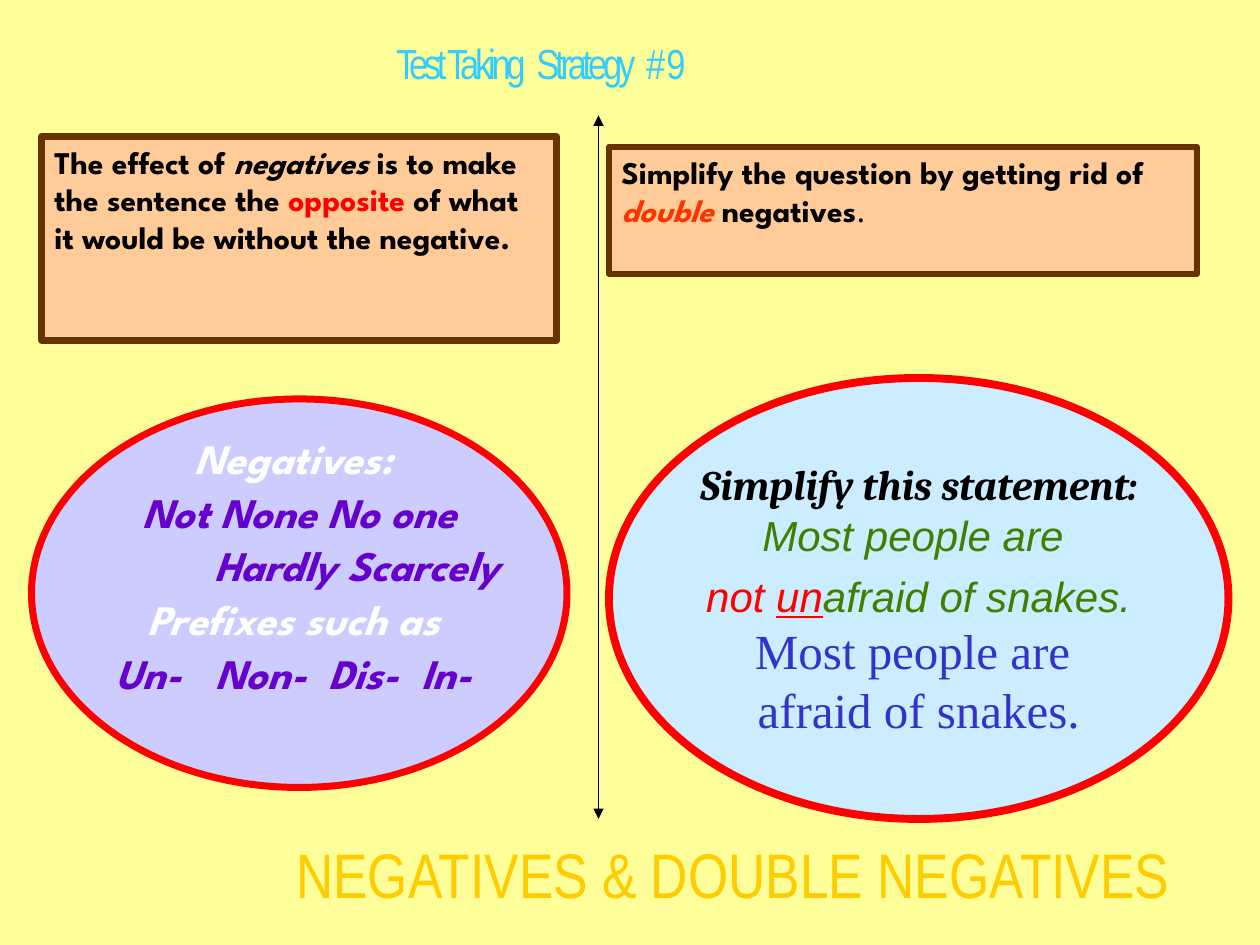
import pptx
import pptx.dml.color
import pptx.enum.shapes
import pptx.enum.text
import pptx.oxml.ns
import pptx.util
from lxml import etree

Pt = pptx.util.Pt
SHAPES = pptx.enum.shapes.MSO_SHAPE
ANCHOR = pptx.enum.text.MSO_ANCHOR
ALIGN = pptx.enum.text.PP_ALIGN

COLORS = {
    "background": "FFFF99", "title": "33CCFF", "topic": "FFCC00",
    "rule_fill": "FFCC99", "rule_line": "663300", "red": "FF0000",
    "orange": "FF3300", "lavender": "CCCCFF", "sky": "CCECFF",
    "purple": "6600CC", "green": "408000", "blue": "3333CC",
    "white": "FFFFFF", "black": "000000",
}


def color(name):
    return pptx.dml.color.RGBColor.from_string(COLORS[name])


def add_run(paragraph, text, font, size, tone="black", bold=False,
            italic=False, underline=False, spacing=0):
    run = paragraph.add_run()
    run.text = text
    run.font.name = font
    run.font.size = Pt(size)
    run.font.color.rgb = color(tone)
    run.font.bold = bold
    run.font.italic = italic
    run.font.underline = underline
    if spacing:
        run.font._element.set("spc", str(round(spacing * 100)))


def add_paragraph(frame, first=False, align=ALIGN.CENTER, before=0):
    paragraph = frame.paragraphs[0] if first else frame.add_paragraph()
    paragraph.alignment = align
    paragraph.space_before = Pt(before)
    return paragraph


def add_heading(slide, box, words, size, tone, spacing=0):
    shape = slide.shapes.add_textbox(*map(Pt, box))
    shape.text_frame.word_wrap = False
    paragraph = add_paragraph(shape.text_frame, first=True)
    for text, gap in words:
        add_run(paragraph, text, "Arial Narrow", size, tone, spacing=gap or spacing)


def add_panel(slide, box, kind, fill, line, width):
    shape = slide.shapes.add_shape(kind, *map(Pt, box))
    shape.shadow.inherit = False
    shape.fill.solid()
    shape.fill.fore_color.rgb = color(fill)
    shape.line.color.rgb = color(line)
    shape.line.width = Pt(width)
    is_oval = kind == SHAPES.OVAL
    shape.text_frame.word_wrap = not is_oval
    shape.text_frame.vertical_anchor = ANCHOR.MIDDLE if is_oval else ANCHOR.TOP
    return shape.text_frame


def add_rule(slide, box, width, runs):
    frame = add_panel(slide, box, SHAPES.RECTANGLE, "rule_fill", "rule_line", width)
    paragraph = add_paragraph(frame, first=True, align=ALIGN.LEFT)
    for text, style in runs:
        add_run(paragraph, text, "League Spartan", 18, **{"bold": True, **style})


def add_negatives(slide, box):
    frame = add_panel(slide, box, SHAPES.OVAL, "lavender", "red", 4)
    frame.margin_bottom = Pt(32)
    lines = [
        ("white", 0, [("Negatives: ", 0)]),
        ("purple", 0, [("Not None No one", 0)]),
        ("purple", 72, [("Hardly Scarcely ", 0)]),
        ("white", 0, [("Prefixes such as ", 0)]),
        ("purple", 0, [("Un-", 0), (" ", 13), ("Non-", 0), (" ", 6.5),
                       ("Dis-", 0), (" ", 6.5), ("In- ", 0)]),
    ]
    for index, (tone, indent, words) in enumerate(lines):
        paragraph = add_paragraph(frame, first=index == 0, before=4.8)
        paragraph.line_spacing = 0.9
        if indent:
            paragraph._p.get_or_add_pPr().set("marL", str(Pt(indent)))
        for text, gap in words:
            add_run(paragraph, text, "League Spartan", 24, tone,
                    bold=True, italic=True, spacing=gap)


def add_example(slide, box):
    frame = add_panel(slide, box, SHAPES.OVAL, "sky", "red", 4.5)
    paragraph = add_paragraph(frame, first=True, before=6)
    add_run(paragraph, "Simplify this statement:", "Cambria", 24, bold=True, italic=True)
    paragraph.add_line_break()
    add_run(paragraph, "Most people are ", "Arial", 24, "green", italic=True)
    paragraph = add_paragraph(frame, before=6)
    for text, tone, underline in [("not ", "red", False), ("un", "red", True),
                                  ("afraid of snakes.", "green", False)]:
        add_run(paragraph, text, "Arial", 24, tone, italic=True, underline=underline)
    for text in ("Most people are ", "afraid of snakes."):
        add_run(add_paragraph(frame), text, "Times New Roman", 28, "blue")


def add_divider(slide, x, top, bottom):
    divider = slide.shapes.add_connector(
        pptx.enum.shapes.MSO_CONNECTOR.STRAIGHT, Pt(x), Pt(top), Pt(x), Pt(bottom))
    divider.line.color.rgb = color("black")
    divider.line.width = Pt(0.75)
    qn = pptx.oxml.ns.qn
    line = divider.line._get_or_add_ln()
    for end in ("a:headEnd", "a:tailEnd"):
        etree.SubElement(line, qn(end)).set("type", "triangle")
    etree.SubElement(divider._element.spPr, qn("a:effectLst"))


def main():
    presentation = pptx.Presentation()
    presentation.slide_width = Pt(720)
    presentation.slide_height = Pt(540)
    slide = presentation.slides.add_slide(presentation.slide_layouts[6])
    slide.background.fill.solid()
    slide.background.fill.fore_color.rgb = color("background")

    add_heading(slide, (84, 18, 450, 54),
                [("Test Taking", 0), (" ", 0.7), ("Strategy", 0), (" ", 0.7), ("# 9", 0)],
                24, "title", spacing=-2.4)
    add_heading(slide, (126, 474, 594, 48),
                [("NEGATIVES & DOUBLE NEGATIVES ", 0)], 36, "topic")
    add_rule(slide, (24, 78, 294, 116.5), 4, [
        ("The effect of ", {}),
        ("negatives", {"italic": True}),
        (" is to make the sentence the ", {}),
        ("opposite", {"tone": "red"}),
        (" of what it would be without the negative.", {}),
    ])
    add_negatives(slide, (18, 228, 306, 222))
    add_rule(slide, (348, 84, 336, 72.5), 3.5, [
        ("Simplify the question by getting rid of ", {}),
        ("double ", {"tone": "orange", "italic": True}),
        ("negatives", {}),
        (".", {"bold": False}),
    ])
    add_example(slide, (348, 216, 354, 252))
    add_divider(slide, 342, 66, 468)
    presentation.save("out.pptx")


if __name__ == "__main__":
    main()
